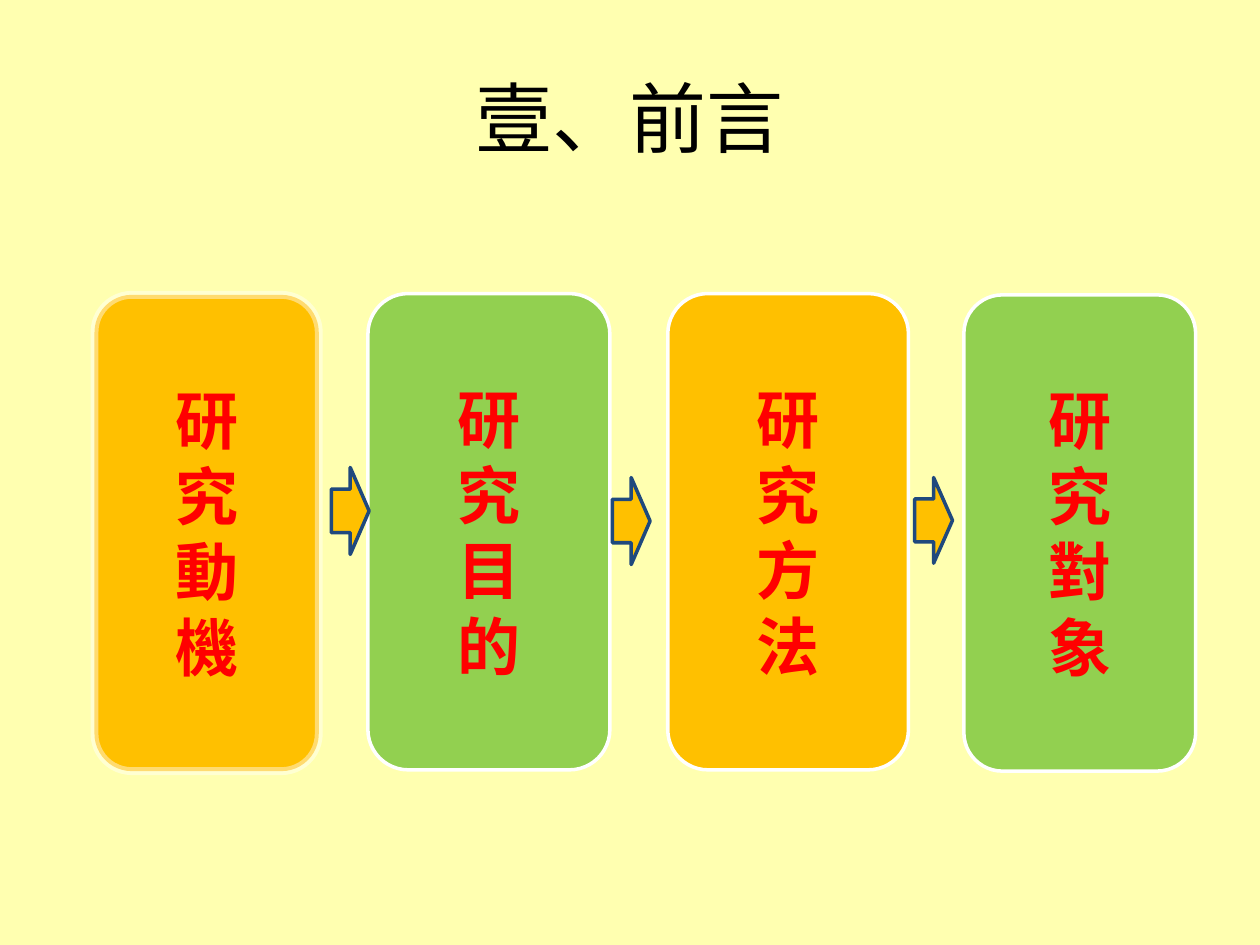
import dataclasses

import pptx
import pptx.dml.color
import pptx.enum.shapes
import pptx.enum.text
import pptx.oxml
import pptx.oxml.ns
import pptx.util

COLUMNS, ROWS = 100, 75
AMBER, GREEN, WHITE, NAVY = "FFC000", "92D050", "FFFFFF", "1F497D"
STEP_FONT = {"name": "Arial", "size": pptx.util.Pt(36), "bold": True}
TITLE_FONT = {"name": "Calibri", "size": pptx.util.Pt(44)}
SHAPES = pptx.enum.shapes.MSO_SHAPE
CENTER = pptx.enum.text.PP_ALIGN.CENTER
MIDDLE = pptx.enum.text.MSO_ANCHOR.MIDDLE


@dataclasses.dataclass
class Area:
    column: float
    row: float
    columns: float
    rows: float


@dataclasses.dataclass
class Step:
    label: str
    area: Area
    fill: str
    border: float = 2
    opacity: int = 100


STEPS = [
    Step("研究動機", Area(7.5, 23.4, 17.8, 37.8), AMBER, 4.5, 44),
    Step("研究目的", Area(29.2, 23.3, 19.2, 37.8), GREEN),
    Step("研究方法", Area(53, 23.3, 19.1, 37.8), AMBER),
    Step("研究對象", Area(76.5, 23.4, 18.4, 37.8), GREEN),
]
ARROWS = [
    Area(26.3, 37.1, 3, 6.9),
    Area(48.6, 37.9, 3, 6.9),
    Area(72.6, 37.9, 3, 6.8),
]


def color(hex_string: str) -> pptx.dml.color.RGBColor:
    return pptx.dml.color.RGBColor.from_string(hex_string)


def apply(target, formats: dict) -> None:
    for name, value in formats.items():
        setattr(target, name, value)


def bounds(area: Area) -> dict:
    column_width = deck.slide_width / COLUMNS
    row_height = deck.slide_height / ROWS
    return {
        "left": round(area.column * column_width),
        "top": round(area.row * row_height),
        "width": round(area.columns * column_width),
        "height": round(area.rows * row_height),
    }


def draw_block(shapes, kind, area: Area, fill: str, line: str, border: float):
    block = shapes.add_shape(kind, **bounds(area))
    block.shadow.inherit = False
    block.fill.solid()
    block.fill.fore_color.rgb = color(fill)
    block.line.color.rgb = color(line)
    block.line.width = pptx.util.Pt(border)
    return block


def fade_line(block, opacity: int) -> None:
    tone = block.line._ln.find(".//" + pptx.oxml.ns.qn("a:srgbClr"))
    alpha = pptx.oxml.parse_xml(
        f'<a:alpha {pptx.oxml.ns.nsdecls("a")} val="{opacity * 1000}"/>'
    )
    tone.append(alpha)


def draw_step(shapes, step: Step) -> None:
    block = draw_block(
        shapes, SHAPES.ROUNDED_RECTANGLE, step.area, step.fill, WHITE, step.border
    )
    if step.opacity < 100:
        fade_line(block, step.opacity)
    frame = block.text_frame
    apply(frame, {"text": "\n".join(step.label), "vertical_anchor": MIDDLE,
                  "word_wrap": True})
    for paragraph in frame.paragraphs:
        paragraph.alignment = CENTER
        font = paragraph.runs[0].font
        apply(font, STEP_FONT)
        font.color.rgb = color("FF0000")


def draw_title(title, text: str) -> None:
    apply(title, bounds(Area(5, 3, 90, 12.5)))
    apply(title.text_frame, {"text": text, "vertical_anchor": MIDDLE})
    heading = title.text_frame.paragraphs[0]
    heading.alignment = CENTER
    font = heading.runs[0].font
    apply(font, TITLE_FONT)
    font.color.rgb = color("000000")


deck = pptx.Presentation()
apply(deck, {"slide_width": pptx.util.Inches(10),
             "slide_height": pptx.util.Inches(7.5)})
slide = deck.slides.add_slide(deck.slide_layouts[5])
slide.background.fill.solid()
slide.background.fill.fore_color.rgb = color("FFFFB0")

draw_title(slide.shapes.title, "壹、前言")
flow = slide.shapes.add_group_shape()
for step in STEPS:
    draw_step(flow.shapes, step)
for arrow in ARROWS:
    draw_block(flow.shapes, SHAPES.RIGHT_ARROW, arrow, AMBER, NAVY, 2)

deck.save("out.pptx")
